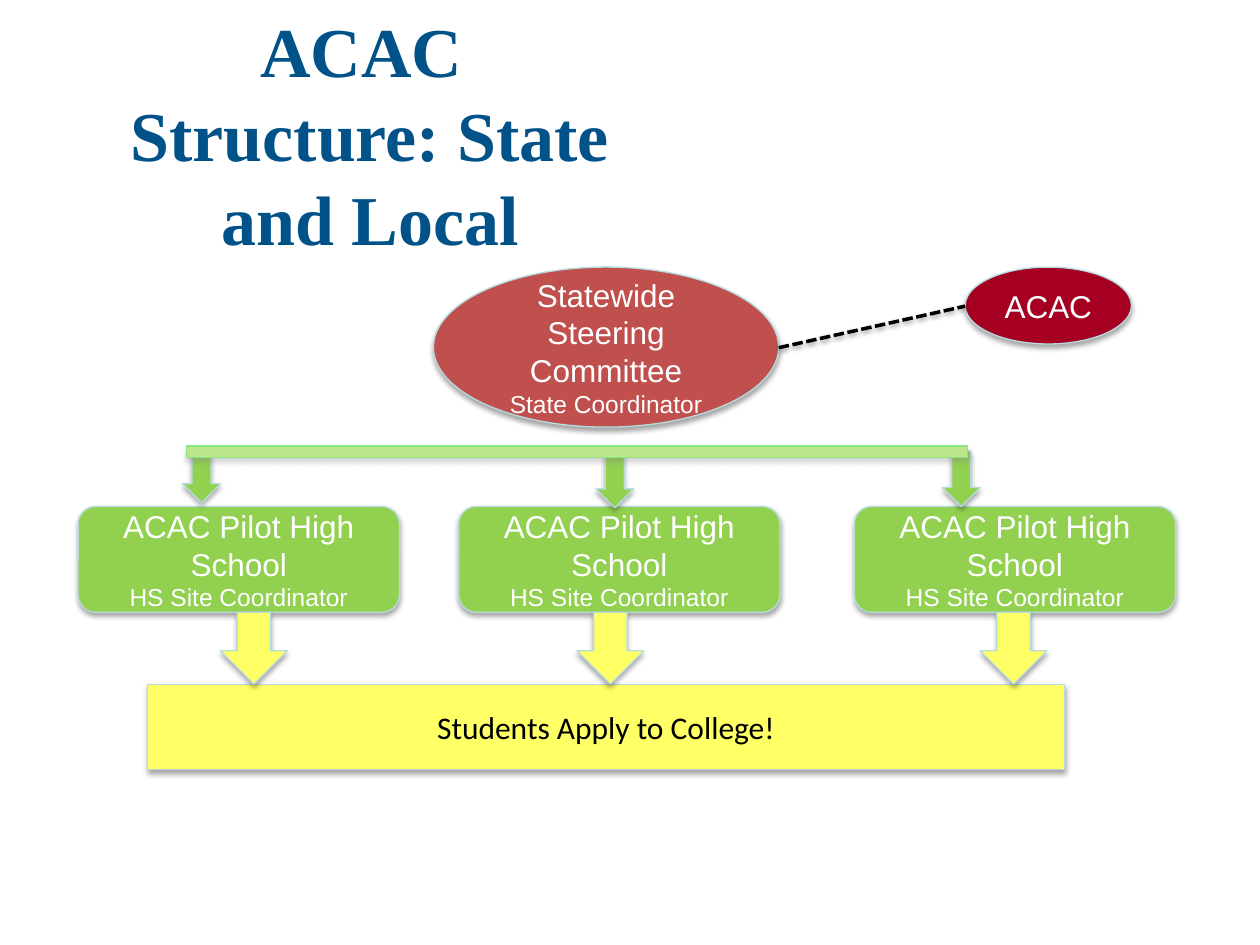
"""Build the ACAC state and local structure slide."""
import pptx
import pptx.dml.color
import pptx.enum.dml
import pptx.enum.shapes
import pptx.enum.text
import pptx.oxml
import pptx.oxml.ns
import pptx.util

Inches, Pt = pptx.util.Inches, pptx.util.Pt
SHAPE = pptx.enum.shapes.MSO_SHAPE
CENTER = pptx.enum.text.PP_ALIGN.CENTER
MIDDLE = pptx.enum.text.MSO_ANCHOR.MIDDLE
GREEN, YELLOW, EDGE = "92D050", "FFFF66", "B6DCDF"


def rgb(value):
    """Return a colour from a hex string."""
    return pptx.dml.color.RGBColor.from_string(value)


def add_shadow(s, color="000000", alpha=35, dist=1.8):
    """Give a shape or connector a soft shadow straight below it."""
    effects = pptx.oxml.parse_xml(
        f'<a:effectLst {pptx.oxml.ns.nsdecls("a")}>'
        f'<a:outerShdw blurRad="{Pt(3.1)}" dist="{Pt(dist)}" dir="5400000" rotWithShape="0">'
        f'<a:srgbClr val="{color}"><a:alpha val="{alpha * 1000}"/></a:srgbClr>'
        '</a:outerShdw></a:effectLst>')
    s._element.spPr.append(effects)


def set_text(s, lines, font, color, bold=None):
    """Write centred paragraphs from (text, size) pairs."""
    tf = s.text_frame
    tf.word_wrap = True
    tf.vertical_anchor = MIDDLE
    tf.text = "\n".join(text for text, _ in lines)
    for p, (_, size) in zip(tf.paragraphs, lines):
        p.alignment = CENTER
        for r in p.runs:
            r.font.name, r.font.size, r.font.bold = font, Pt(size), bold
            r.font.color.rgb = rgb(color)


def add_box(slide, kind, box, fill, lines=(), font="Arial", color="FFFFFF",
            edge=EDGE, shadow="000000"):
    """Add a filled, outlined and shadowed shape with optional text."""
    s = slide.shapes.add_shape(kind, *map(Inches, box))
    s.fill.solid()
    s.fill.fore_color.rgb = rgb(fill)
    s.line.color.rgb = rgb(edge)
    s.line.width = Pt(0.75)
    add_shadow(s, shadow)
    if lines:
        set_text(s, lines, font, color)
    return s


def add_dashed_link(slide, start, end):
    """Add a dashed black line between two points."""
    s = slide.shapes.add_connector(pptx.enum.shapes.MSO_CONNECTOR.STRAIGHT,
                                   *map(Inches, start + end))
    s.line.color.rgb = rgb("000000")
    s.line.width = Pt(2)
    s.line.dash_style = pptx.enum.dml.MSO_LINE.SQUARE_DOT
    add_shadow(s, alpha=38, dist=1.6)


def add_title(slide):
    """Place and format the title placeholder."""
    s = slide.shapes.title
    s.left, s.top, s.width, s.height = map(Inches, (0.49, 0, 4.89, 2.12))
    set_text(s, [("ACAC ", 40), ("Structure: State and Local", 40)],
             "Times New Roman", "005288", True)
    for p in s.text_frame.paragraphs:
        p.line_spacing = Pt(48)
        p.space_before = Pt(0)


def main():
    """Build and save the slide."""
    prs = pptx.Presentation()
    prs.slide_width, prs.slide_height = Inches(10), Inches(7.5)
    slide = prs.slides.add_slide(prs.slide_layouts[5])
    add_title(slide)

    add_box(slide, SHAPE.OVAL, (3.44, 2.12, 2.74, 1.27), "C0504D",
            [("Statewide Steering Committee", 18), ("State Coordinator", 14)])
    add_box(slide, SHAPE.OVAL, (7.66, 2.12, 1.32, 0.61), "A50021", [("ACAC", 18)])
    add_box(slide, SHAPE.RECTANGLE, (1.17, 5.43, 7.28, 0.68), YELLOW,
            [("Students Apply to College!", 18)], "Calibri", "000000")

    for left in (0.62, 3.64, 6.78):
        add_box(slide, SHAPE.ROUNDED_RECTANGLE, (left, 4.02, 2.55, 0.84), GREEN,
                [("ACAC Pilot High School", 18), ("HS Site Coordinator", 14)])
    for left in (1.75, 4.58, 7.78):
        add_box(slide, SHAPE.DOWN_ARROW, (left, 4.86, 0.53, 0.57), YELLOW)
    for left, top in ((4.73, 3.59), (7.48, 3.58), (1.45, 3.55)):
        add_box(slide, SHAPE.DOWN_ARROW, (left, top, 0.3, 0.44), GREEN)
    add_box(slide, SHAPE.RECTANGLE, (1.48, 3.54, 6.2, 0.09), "BAE589",
            edge="8DE586", shadow="808080")

    add_dashed_link(slide, (6.18, 2.76), (7.66, 2.43))
    prs.save("out.pptx")


if __name__ == "__main__":
    main()
